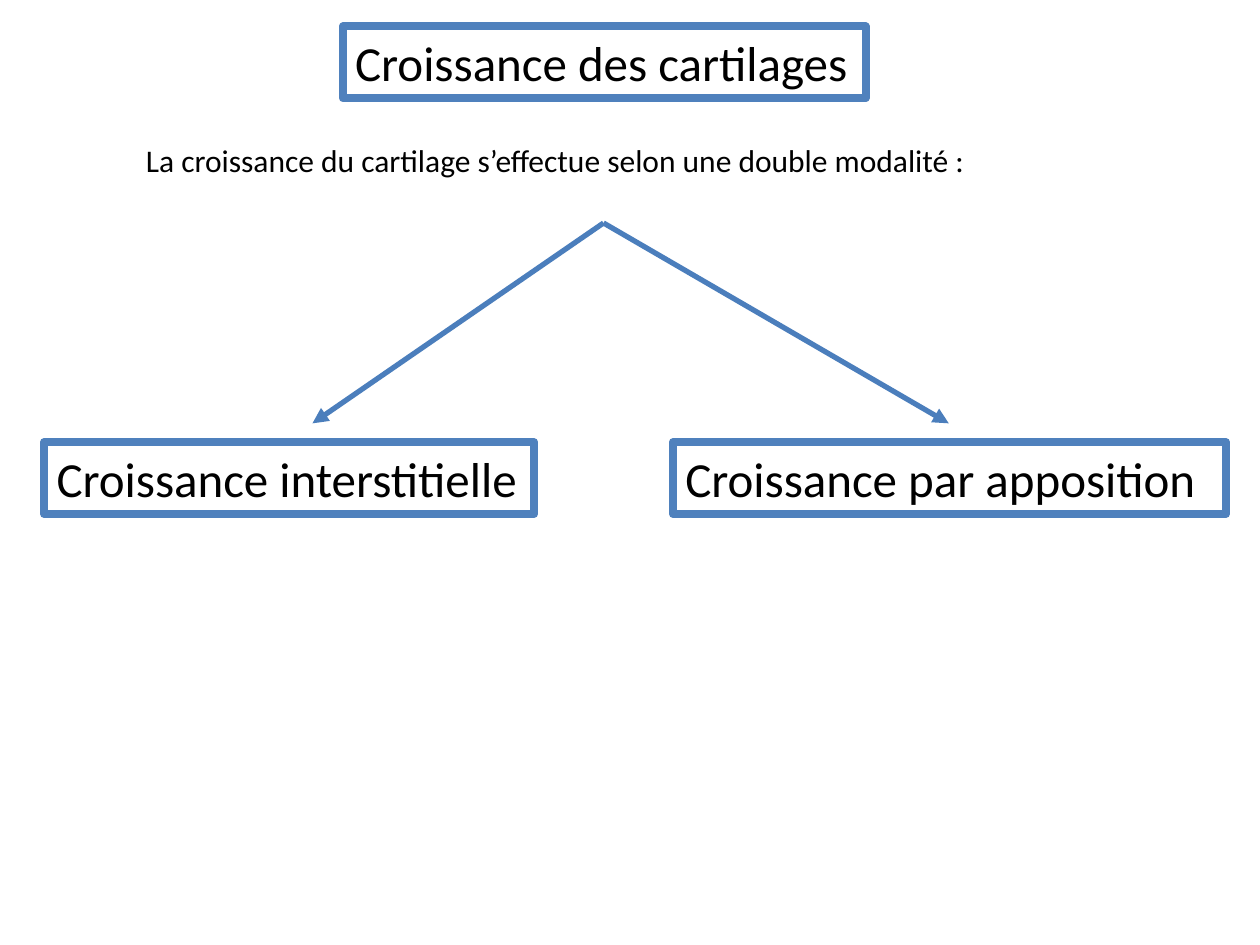
from dataclasses import dataclass

from lxml.etree import SubElement
from pptx import Presentation
from pptx.dml.color import RGBColor as RGB
from pptx.enum.shapes import MSO_CONNECTOR as CONN, MSO_SHAPE as SHAPE
from pptx.enum.text import MSO_ANCHOR as ANCHOR, MSO_AUTO_SIZE as AUTO, PP_ALIGN as ALIGN
from pptx.oxml.ns import qn
from pptx.util import Inches, Pt


@dataclass(frozen=True)
class Theme:
    font: str = "Calibri"
    text: RGB = RGB(0x00, 0x00, 0x00)
    fill: RGB = RGB(0xFF, 0xFF, 0xFF)
    border: RGB = RGB(0x4F, 0x81, 0xBD)
    arrow: RGB = RGB(0x4B, 0x7E, 0xBC)
    heading: Pt = Pt(28)
    body: Pt = Pt(18)
    border_width: Pt = Pt(4.5)
    arrow_width: Pt = Pt(3)


class Deck:
    def __init__(self, prs, theme):
        self.theme = theme
        self.slide = prs.slides.add_slide(prs.slide_layouts[6])

    def add_text(self, sp, text, size):
        tf = sp.text_frame
        tf.word_wrap = True
        tf.auto_size = AUTO.SHAPE_TO_FIT_TEXT
        tf.vertical_anchor = ANCHOR.TOP
        p = tf.paragraphs[0]
        p.alignment = ALIGN.LEFT
        r = p.add_run()
        r.text = text
        r.font.name = self.theme.font
        r.font.size = size
        r.font.color.rgb = self.theme.text

    def label(self, text, x, y, w, h):
        sp = self.slide.shapes.add_textbox(Inches(x), Inches(y), Inches(w), Inches(h))
        self.add_text(sp, text, self.theme.body)

    def box(self, text, x, y, w, h=0.57):
        sp = self.slide.shapes.add_shape(
            SHAPE.RECTANGLE, Inches(x), Inches(y), Inches(w), Inches(h))
        sp.shadow.inherit = False
        sp.fill.solid()
        sp.fill.fore_color.rgb = self.theme.fill
        sp.line.color.rgb = self.theme.border
        sp.line.width = self.theme.border_width
        self.add_text(sp, text, self.theme.heading)

    def arrow(self, start, end):
        cx = self.slide.shapes.add_connector(
            CONN.STRAIGHT, *map(Inches, start), *map(Inches, end))
        cx.line.color.rgb = self.theme.arrow
        cx.line.width = self.theme.arrow_width
        sppr = cx._element.spPr
        SubElement(sppr.find(qn("a:ln")), qn("a:tailEnd"), type="triangle")
        SubElement(sppr, qn("a:effectLst"))


def main():
    prs = Presentation()
    prs.slide_width, prs.slide_height = Inches(10), Inches(7.5)
    deck = Deck(prs, Theme())

    deck.box("Croissance des cartilages", 2.72, 0.21, 4.15)
    deck.label("La croissance du cartilage s’effectue selon une double modalité :",
               1.06, 1.07, 8.5, 0.4)

    modes = [
        ("Croissance interstitielle", 0.35, 3.89, 2.48),
        ("Croissance par apposition", 5.34, 4.39, 7.53),
    ]
    for text, x, w, _ in modes:
        deck.box(text, x, 3.51, w)
    for *_, tip in modes:
        deck.arrow((4.79, 1.77), (tip, 3.36))

    prs.save("out.pptx")


if __name__ == "__main__":
    main()
